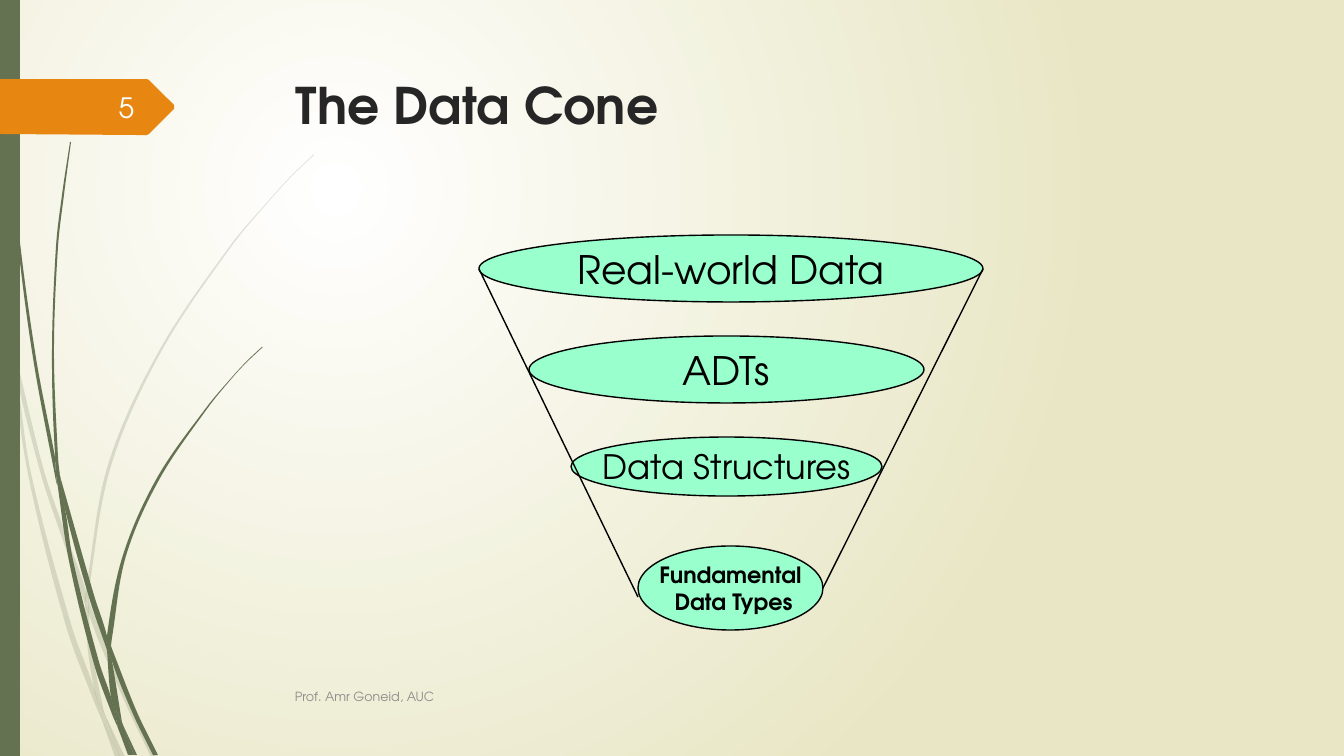
from math import dist

from lxml import etree
from pptx import Presentation, util as u
from pptx.dml.color import RGBColor
from pptx.enum import shapes, text
from pptx.oxml.ns import qn

SCALE = 914400 / 100.8
FONT = "TeX Gyre Adventor"
GREEN, ORANGE, MINT, BLACK = "647252", "E78712", "99FFCC", "000000"

# Outlines of the grass pieces
PALE_GRASS = [
    [(11, 353), (9, 325), (0, 284), (0, 301), (10, 347)],
    [(58, 526), (85, 604), (86, 591), (62, 524), (43, 467), (14, 348),
     (17, 379), (42, 478)],
    [(93, 612), (89, 601), (89, 615), (124, 700), (151, 757), (156, 757),
     (128, 698)],
    [(120, 757), (125, 757), (106, 717)],
    [(94, 688), (71, 624), (31, 473), (17, 379), (11, 353), (28, 474),
     (66, 626), (93, 699), (102, 720), (100, 713)],
    [(85, 604), (88, 651), (94, 688), (97, 698), (106, 717), (104, 712),
     (92, 651), (89, 615), (89, 613)],
    [(89, 589), (111, 466), (161, 352), (231, 247), (270, 200), (292, 176),
     (314, 155), (314, 154), (291, 176), (270, 199), (230, 246), (159, 351),
     (108, 465), (86, 589), (86, 591), (89, 601)],
    [(102, 720), (115, 757), (120, 757)],
    [(89, 613), (89, 615), (89, 601), (86, 591), (85, 604)],
    [(97, 698), (94, 688), (100, 713), (102, 720), (120, 757), (106, 717)],
]
DARK_GRASS = [
    [(7, 111), (17, 235), (33, 358), (56, 481), (57, 485), (55, 461),
     (55, 457), (36, 358), (19, 234), (8, 110), (5, 48), (4, 0), (3, 0),
     (4, 48)],
    [(89, 597), (107, 650), (107, 636), (94, 595), (60, 476), (65, 509)],
    [(114, 654), (111, 646), (112, 661), (133, 714), (153, 755), (158, 755),
     (137, 712)],
    [(111, 697), (99, 662), (73, 560), (65, 509), (57, 481), (69, 561),
     (94, 664), (112, 714), (118, 728), (117, 723)],
    [(60, 476), (58, 457), (54, 352), (58, 247), (64, 195), (71, 142),
     (70, 142), (62, 195), (56, 247), (52, 352), (55, 453)],
    [(134, 755), (137, 755), (123, 725)],
    [(57, 481), (65, 509), (60, 476), (55, 453), (55, 457)],
    [(112, 638), (126, 556), (159, 480), (207, 409), (233, 377), (247, 362),
     (263, 347), (262, 347), (247, 361), (233, 376), (206, 408), (157, 478),
     (123, 555), (107, 636), (111, 646)],
    [(118, 728), (128, 755), (132, 755)],
    [(107, 650), (111, 697), (117, 712), (123, 725), (122, 722), (112, 661),
     (110, 656)],
    [(107, 650), (110, 656), (112, 661), (111, 646), (107, 636)],
    [(117, 712), (111, 697), (117, 723), (118, 728), (131, 755), (134, 755),
     (123, 725)],
]
TAG = [(174, 109), (149, 134), (147, 135), (137, 135), (0, 134), (0, 79),
       (137, 79), (147, 79), (149, 80), (174, 105)]

# Cone levels: left, top, width, height, lines, text size, bold
LEVELS = [
    (479, 235, 504, 67, ["Real-world Data"], 28, False),
    (529, 336, 395, 67, ["ADTs"], 28, False),
    (571, 437, 311, 59, ["Data Structures"], 24, False),
    (638, 546, 185, 84, ["Fundamental", " Data Types"], 16, True),
]
SIDES = [(983, 269, 823, 588), (479, 269, 638, 597)]


def px(n):
    return u.Emu(round(n * SCALE))


def rgb(color):
    return RGBColor.from_string(color)


def paint(sp, fill, line=None):
    sp.shadow.inherit = False
    sp.fill.solid()
    sp.fill.fore_color.rgb = rgb(fill)
    if line:
        sp.line.color.rgb = rgb(line)
        sp.line.width = u.Pt(1)
    else:
        sp.line.fill.background()


def write(sp, lines, size, color, bold=False, align=text.PP_ALIGN.LEFT,
          anchor=text.MSO_ANCHOR.MIDDLE, wrap=True):
    tf = sp.text_frame
    tf.word_wrap = wrap
    tf.vertical_anchor = anchor
    for i, line in enumerate(lines):
        p = tf.add_paragraph() if i else tf.paragraphs[0]
        p.alignment = align
        r = p.add_run()
        r.text = line
        r.font.name = FONT
        r.font.size = u.Pt(size)
        r.font.bold = bold
        r.font.color.rgb = rgb(color)


def add_label(s, box, line, size, color, **style):
    sp = s.shapes.add_textbox(*map(px, box))
    write(sp, [line], size, color, **style)


def add_preset(s, kind, box, fill, line=None):
    sp = s.shapes.add_shape(kind, *map(px, box))
    paint(sp, fill, line)
    return sp


def add_line(s, ends):
    c = s.shapes.add_connector(shapes.MSO_CONNECTOR.STRAIGHT, *map(px, ends))
    c.line.color.rgb = rgb(BLACK)
    c.line.width = u.Pt(1)
    etree.SubElement(c._element.spPr, qn("a:effectLst"))


def add_outline(parent, points, fill):
    corners = [(px(x), px(y)) for x, y in points]
    builder = parent.shapes.build_freeform(*corners[0])
    builder.add_line_segments(corners[1:] + corners[:1], close=True)
    sp = builder.convert_to_shape()
    paint(sp, fill)
    return sp


def direction(a, b):
    length = dist(a, b)
    return (b[0] - a[0]) / length, (b[1] - a[1]) / length


def tangent(before, point, after, chord):
    """Direction through a point, or along the chord at a sharp corner."""
    (ax, ay), (bx, by) = direction(before, point), direction(point, after)
    return direction(before, after) if ax * bx + ay * by > 0.7 else chord


def bend(sp, points):
    """Turn the straight sides of an outline into cubic curves."""
    left, top = min(x for x, _ in points), min(y for _, y in points)
    n = len(points)
    for i, side in enumerate(sp._element.findall(".//" + qn("a:lnTo"))):
        before, a, b, after = (points[(i + k) % n] for k in (-1, 0, 1, 2))
        chord, reach = direction(a, b), dist(a, b) / 3
        ta, tb = tangent(before, a, b, chord), tangent(a, b, after, chord)
        handles = [(a[0] + ta[0] * reach, a[1] + ta[1] * reach),
                   (b[0] - tb[0] * reach, b[1] - tb[1] * reach)]
        side.tag = qn("a:cubicBezTo")
        for k, (x, y) in enumerate(handles):
            pt = etree.Element(qn("a:pt"), x=str(px(x - left)),
                               y=str(px(y - top)))
            side.insert(k, pt)


def add_grass(s, pieces, alpha=None):
    group = s.shapes.add_group_shape()
    for points in pieces:
        sp = add_outline(group, points, GREEN)
        bend(sp, points)
        if alpha:
            color = sp._element.spPr.find(".//" + qn("a:srgbClr"))
            etree.SubElement(color, qn("a:alpha"), val=str(alpha * 1000))


def set_background(s):
    fill = s.background.fill
    fill.gradient()
    for stop, color in zip(fill.gradient_stops, ("FFFFFF", "E8E6C4")):
        stop.color.rgb = rgb(color)
    grad = s._element.find(".//" + qn("a:gradFill"))
    grad.remove(grad.find(qn("a:lin")))
    circle = etree.SubElement(grad, qn("a:path"), path="circle")
    etree.SubElement(circle, qn("a:fillToRect"),
                     l="50000", t="50000", r="100000", b="100000")


def main():
    prs = Presentation()
    prs.slide_width, prs.slide_height = px(1344), px(756)
    s = prs.slides.add_slide(prs.slide_layouts[6])
    set_background(s)

    # Grass, side bar and number tag
    add_grass(s, PALE_GRASS, alpha=20)
    add_grass(s, DARK_GRASS)
    add_preset(s, shapes.MSO_SHAPE.RECTANGLE, (0, 0, 20, 756), GREEN)
    add_outline(s, TAG, ORANGE)

    # Title, footer and slide number
    add_label(s, (286, 69, 983, 141), "The Data Cone", 36, "262626",
              bold=True, anchor=text.MSO_ANCHOR.TOP)
    add_label(s, (285, 677, 840, 40), "Prof. Amr Goneid, AUC", 9, "8C8C8C")
    add_label(s, (58, 87, 86, 40), "5", 20, "FEFFFF",
              align=text.PP_ALIGN.RIGHT)

    # Cone
    for *box, lines, size, bold in LEVELS:
        sp = add_preset(s, shapes.MSO_SHAPE.OVAL, box, MINT, BLACK)
        write(sp, lines, size, BLACK, bold, text.PP_ALIGN.CENTER, wrap=False)
    for ends in SIDES:
        add_line(s, ends)

    prs.save("out.pptx")


if __name__ == "__main__":
    main()
